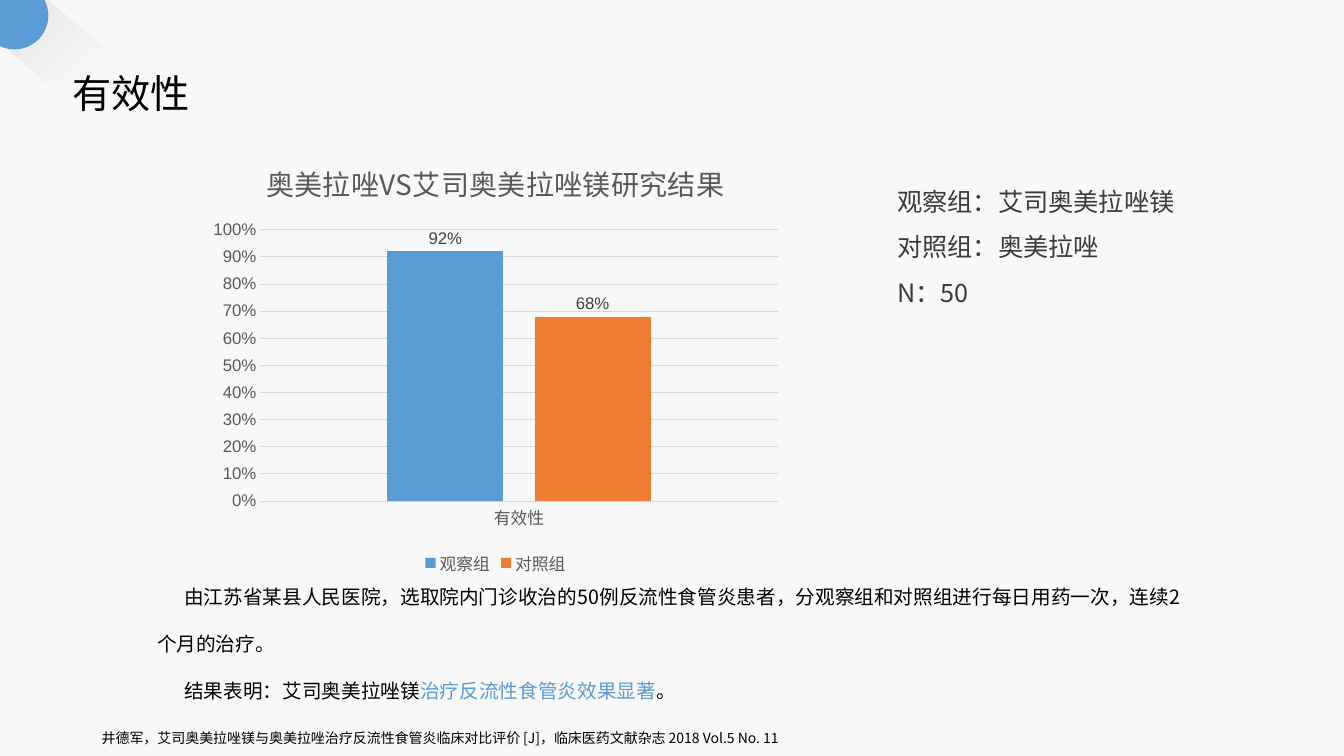
from dataclasses import dataclass

from lxml import etree
from pptx import Presentation
from pptx.chart.data import CategoryChartData
from pptx.dml.color import RGBColor
from pptx.enum.chart import XL_CHART_TYPE, XL_LABEL_POSITION, XL_LEGEND_POSITION, XL_TICK_MARK
from pptx.enum.shapes import MSO_SHAPE
from pptx.enum.text import MSO_AUTO_SIZE
from pptx.oxml import parse_xml
from pptx.oxml.ns import nsdecls, qn
from pptx.slide import Slide
from pptx.text.text import Font
from pptx.util import Inches, Pt

CLUSTERED = XL_CHART_TYPE.COLUMN_CLUSTERED
OUTSIDE_END = XL_LABEL_POSITION.OUTSIDE_END
LEGEND_BOTTOM = XL_LEGEND_POSITION.BOTTOM
NO_TICK = XL_TICK_MARK.NONE
OVAL = MSO_SHAPE.OVAL
GROW = MSO_AUTO_SIZE.SHAPE_TO_FIT_TEXT

BACKGROUND = RGBColor(0xF8, 0xF8, 0xF8)
BLACK = RGBColor(0, 0, 0)
BLUE = RGBColor(0x5B, 0x9B, 0xD5)
ORANGE = RGBColor(0xED, 0x7D, 0x31)
AXIS_GRAY = RGBColor(0x59, 0x59, 0x59)
LABEL_GRAY = RGBColor(0x40, 0x40, 0x40)
GRID_GRAY = RGBColor(0xD9, 0xD9, 0xD9)
GROUP_GRAY = RGBColor(0x3E, 0x3A, 0x39)

LATIN = "Arial"
CJK = "Noto Sans CJK SC"
PERCENT = "0%"


@dataclass(frozen=True)
class Span:
    text: str
    color: RGBColor = BLACK


@dataclass(frozen=True)
class TextBlock:
    left: float
    top: float
    width: float
    height: float
    paragraphs: tuple[tuple[Span, ...], ...]
    size: float
    font: str = CJK
    line_spacing: float = 1.0
    indent: float = 0.0
    wrap: bool = True


@dataclass(frozen=True)
class StudyGroup:
    name: str
    rate: float
    color: RGBColor


STUDY_GROUPS = (
    StudyGroup("观察组", 0.92, BLUE),
    StudyGroup("对照组", 0.68, ORANGE),
)

TEXT_BLOCKS = (
    TextBlock(0.62, 0.64, 1.38, 0.57, ((Span("有效性"),),), 28, font=LATIN, wrap=False),
    TextBlock(0.91, 7.19, 9.8, 0.28, ((Span(
        "井德军，艾司奥美拉唑镁与奥美拉唑治疗反流性食管炎临床对比评价 [J]，"
        "临床医药文献杂志 2018 Vol.5 No. 11"),),), 10),
    TextBlock(8.8, 1.65, 3.81, 1.41, (
        (Span("观察组：艾司奥美拉唑镁", GROUP_GRAY),),
        (Span("对照组：奥美拉唑", GROUP_GRAY),),
        (Span("N：50", GROUP_GRAY),),
    ), 18, line_spacing=1.5),
    TextBlock(1.46, 5.52, 10.42, 1.44, (
        (Span("由江苏省某县人民医院，选取院内门诊收治的50例反流性食管炎患者，"
              "分观察组和对照组进行每日用药一次，连续2个月的治疗。"),),
        (Span("结果表明：艾司奥美拉唑镁"), Span("治疗反流性食管炎效果显著", BLUE), Span("。")),
    ), 14, line_spacing=2.0, indent=0.27),
)


def style_font(font: Font, size: float, color: RGBColor, name: str = LATIN) -> None:
    font.size = Pt(size)
    font.bold = False
    font.color.rgb = color
    font.name = name


def set_east_asian(font_properties: etree._Element, name: str) -> None:
    east_asian = etree.Element(qn("a:ea"), typeface=name)
    font_properties.find(qn("a:latin")).addnext(east_asian)


def add_text_block(slide: Slide, block: TextBlock) -> None:
    box = slide.shapes.add_textbox(
        Inches(block.left), Inches(block.top), Inches(block.width), Inches(block.height))
    frame = box.text_frame
    frame.word_wrap = block.wrap
    frame.auto_size = GROW
    for index, spans in enumerate(block.paragraphs):
        paragraph = frame.add_paragraph() if index else frame.paragraphs[0]
        paragraph.line_spacing = block.line_spacing
        if block.indent:
            paragraph._p.get_or_add_pPr().set("indent", str(Inches(block.indent)))
        for span in spans:
            run = paragraph.add_run()
            run.text = span.text
            style_font(run.font, block.size, span.color, block.font)
            set_east_asian(run._r.get_or_add_rPr(), CJK)


def add_corner_ornament(slide: Slide) -> None:
    # Long shadow fading towards the lower right
    corners = [(Inches(x), Inches(y))
               for x, y in ((-0.15, 0.3), (0.39, -0.06), (1.22, 0.64), (0.73, 1.04))]
    builder = slide.shapes.build_freeform(*corners[0])
    builder.add_line_segments(corners[1:], close=True)
    long_shadow = builder.convert_to_shape()
    long_shadow.shadow.inherit = False
    long_shadow.line.fill.background()
    long_shadow.fill.background()
    stops = "".join(
        f'<a:gs pos="{position * 1000}"><a:srgbClr val="{color}">'
        f'<a:alpha val="{alpha * 1000}"/></a:srgbClr></a:gs>'
        for position, color, alpha in ((0, "F7FAFD", 0), (77, "CCCDCE", 40), (100, "BFBFBF", 100)))
    gradient = parse_xml(
        f'<a:gradFill {nsdecls("a")} rotWithShape="1"><a:gsLst>{stops}</a:gsLst>'
        f'<a:lin ang="{225 * 60000}" scaled="0"/></a:gradFill>')
    properties = long_shadow._element.spPr
    properties.replace(properties.find(qn("a:noFill")), gradient)

    # Blue disc over the start of the shadow
    disc = slide.shapes.add_shape(OVAL, Inches(-0.19), Inches(-0.18), Inches(0.67), Inches(0.67))
    disc.shadow.inherit = False
    disc.fill.solid()
    disc.fill.fore_color.rgb = BLUE
    disc.line.fill.background()


def add_efficacy_chart(slide: Slide) -> None:
    data = CategoryChartData(number_format=PERCENT)
    data.categories = ["有效性"]
    for group in STUDY_GROUPS:
        data.add_series(group.name, [group.rate])
    chart = slide.shapes.add_chart(
        CLUSTERED, Inches(2), Inches(1.39), Inches(5.83), Inches(4.36), data).chart
    style_font(chart.font, 10, BLACK)

    # Title and legend
    chart.has_title = True
    title = chart.chart_title.text_frame.paragraphs[0].add_run()
    title.text = "奥美拉唑VS艾司奥美拉唑镁研究结果"
    style_font(title.font, 20, AXIS_GRAY, CJK)
    set_east_asian(title._r.get_or_add_rPr(), CJK)
    chart.chart_title.include_in_layout = False
    chart.has_legend = True
    chart.legend.position = LEGEND_BOTTOM
    chart.legend.include_in_layout = False
    style_font(chart.legend.font, 12, AXIS_GRAY)

    # Axes
    rates = chart.value_axis
    for axis in (chart.category_axis, rates):
        axis.major_tick_mark = NO_TICK
        axis.minor_tick_mark = NO_TICK
        style_font(axis.tick_labels.font, 12, AXIS_GRAY)
    rates.minimum_scale, rates.maximum_scale, rates.major_unit = 0, 1, 0.1
    rates.tick_labels.number_format = PERCENT
    rates.tick_labels.number_format_is_linked = False
    rates.format.line.fill.background()
    for line in (chart.category_axis.format.line, rates.major_gridlines.format.line):
        line.color.rgb = GRID_GRAY
        line.width = Pt(0.75)

    # Columns and their labels
    plot = chart.plots[0]
    plot.vary_by_categories = False
    plot.gap_width = 219
    plot.overlap = -27
    for series, group in zip(plot.series, STUDY_GROUPS):
        series.format.fill.solid()
        series.format.fill.fore_color.rgb = group.color
        labels = series.data_labels
        labels.show_value = True
        labels.position = OUTSIDE_END
        labels.number_format = PERCENT
        labels.number_format_is_linked = False
        style_font(labels.font, 12, LABEL_GRAY)


def main() -> None:
    presentation = Presentation()
    presentation.slide_width = Inches(13.33)
    presentation.slide_height = Inches(7.5)
    slide = presentation.slides.add_slide(presentation.slide_layouts[6])
    slide.background.fill.solid()
    slide.background.fill.fore_color.rgb = BACKGROUND
    add_corner_ornament(slide)
    add_efficacy_chart(slide)
    for block in TEXT_BLOCKS:
        add_text_block(slide, block)
    presentation.save("out.pptx")


if __name__ == "__main__":
    main()
